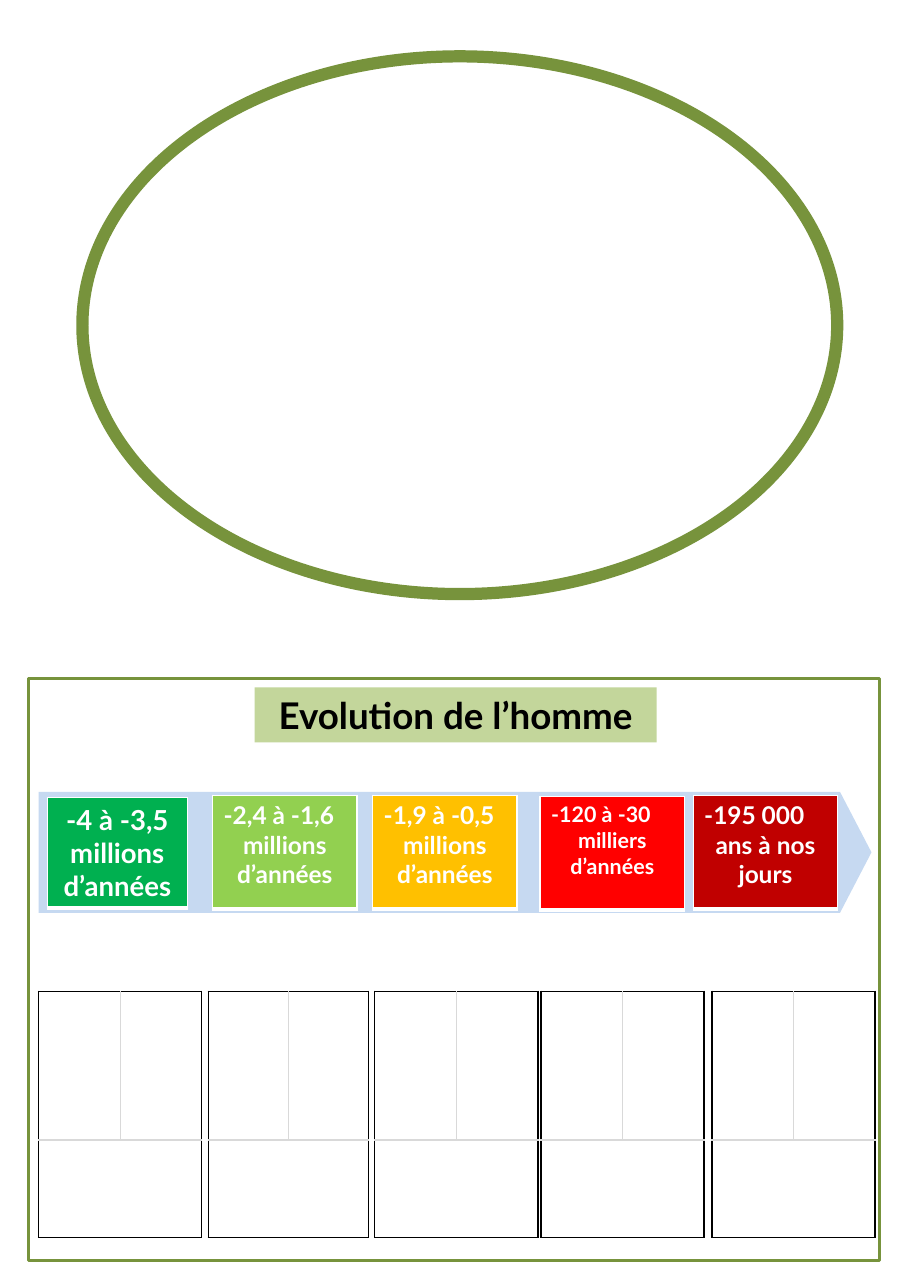
from lxml.etree import SubElement
from pptx import Presentation
from pptx.dml.color import RGBColor
from pptx.enum.shapes import MSO_SHAPE
from pptx.enum.text import MSO_ANCHOR, PP_ALIGN
from pptx.oxml.ns import qn
from pptx.util import Cm, Pt

# Colours
WHITE = RGBColor(0xFF, 0xFF, 0xFF)
BLACK = RGBColor(0, 0, 0)
GREY = RGBColor(0xD9, 0xD9, 0xD9)
OLIVE = RGBColor(0x77, 0x93, 0x3C)
LIME = RGBColor(0xC3, 0xD6, 0x9B)
SKY = RGBColor(0xC6, 0xD9, 0xF1)
GREEN = RGBColor(0, 0xB0, 0x50)
LEAF = RGBColor(0x92, 0xD0, 0x50)
AMBER = RGBColor(0xFF, 0xC0, 0)
RED = RGBColor(0xFF, 0, 0)
DARK = RGBColor(0xC0, 0, 0)

# Content; lengths in centimetres
FONT = "Lato"
TITLE = "Evolution de l’homme"
# left, top, width, height, text size, fill, paragraphs
AGES = [
    (1.09, 18.39, 3.23, 2.54, 18, GREEN, ["-4 à -3,5 millions d’années"]),
    (4.9, 18.34, 3.33, 2.62, 16, LEAF, ["-2,4 à -1,6", "millions d’années"]),
    (8.59, 18.34, 3.33, 2.62, 16, AMBER, ["-1,9 à -0,5", "millions d’années"]),
    (12.45, 18.36, 3.33, 2.62, 14, RED, ["-120 à -30", "milliers d’années"]),
    (15.98, 18.34, 3.33, 2.62, 16, DARK, ["-195 000", "ans à nos jours"]),
]
# left, column width
GRIDS = [(0.89, 1.88), (4.8, 1.85), (8.64, 1.88), (12.47, 1.88), (16.41, 1.88)]
GRID_TOP = 22.86
ROWS = [3.43, 2.24]

deck = Presentation()
deck.slide_width, deck.slide_height = Cm(21), Cm(29.7)
slide = deck.slides.add_slide(deck.slide_layouts[6])


def add_form(kind, box, fill=None, line=None, width=0):
    form = slide.shapes.add_shape(kind, *map(Cm, box))
    form.shadow.inherit = False
    if fill is None:
        form.fill.background()
    else:
        form.fill.solid()
        form.fill.fore_color.rgb = fill
    if line is None:
        form.line.fill.background()
    else:
        form.line.color.rgb = line
        form.line.width = Pt(width)
    return form


def style(para, size, color, align):
    para.alignment = align
    for run in para.runs:
        font = run.font
        font.name, font.size, font.bold = FONT, Pt(size), True
        font.color.rgb = color


def add_grid(left, top, cols, rows):
    box = map(Cm, (left, top, sum(cols), sum(rows)))
    table = slide.shapes.add_table(len(rows), len(cols), *box).table
    table.first_row = table.horz_banding = False
    for col, width in zip(table.columns, cols):
        col.width = Cm(width)
    for row, height in zip(table.rows, rows):
        row.height = Cm(height)
    return table


def paint(cell, fill, edges):
    """Edges are (colour, points) for left, right, top, bottom."""
    cell.fill.solid()
    cell.fill.fore_color.rgb = fill
    props = cell._tc.get_or_add_tcPr()
    for i, (side, (color, width)) in enumerate(zip("LRTB", edges)):
        line = SubElement(props, qn(f"a:ln{side}"), w=str(Pt(width)))
        solid = SubElement(line, qn("a:solidFill"))
        SubElement(solid, qn("a:srgbClr"), val=str(color))
        props.insert(i, line)


# Oval, frame and title
add_form(MSO_SHAPE.OVAL, (1.9, 1.3, 17.4, 12.4), line=OLIVE, width=8)
add_form(MSO_SHAPE.RECTANGLE, (0.66, 15.65, 19.61, 13.41), line=OLIVE, width=2)
title = add_form(MSO_SHAPE.RECTANGLE, (5.87, 15.85, 9.27, 1.27), fill=LIME)
title.text_frame.text = TITLE
title.text_frame.vertical_anchor = MSO_ANCHOR.MIDDLE
style(title.text_frame.paragraphs[0], 24, BLACK, PP_ALIGN.CENTER)

# Empty grids: black outside, grey inside, bottom row merged
for left, width in GRIDS:
    table = add_grid(left, GRID_TOP, [width] * 2, ROWS)
    table.cell(1, 0).merge(table.cell(1, 1))
    for r in range(2):
        for c in range(2):
            outer = (c == 0 or r == 1, c == 1 or r == 1, r == 0, r == 1)
            edges = [(BLACK if out else GREY, 1) for out in outer]
            paint(table.cell(r, c), WHITE, edges)

# Time arrow with its periods
arrow = add_form(MSO_SHAPE.PENTAGON, (0.89, 18.26, 19.2, 2.79), fill=SKY)
arrow.adjustments[0] = 0.26
for left, top, width, height, size, fill, lines in AGES:
    cell = add_grid(left, top, [width], [height]).cell(0, 0)
    paint(cell, fill, [(WHITE, 1)] * 3 + [(WHITE, 3)])
    cell.text_frame.text = "\n".join(lines)
    for para in cell.text_frame.paragraphs:
        style(para, size, WHITE, PP_ALIGN.LEFT)
    cell.text_frame.paragraphs[-1].alignment = PP_ALIGN.CENTER

deck.save("out.pptx")
